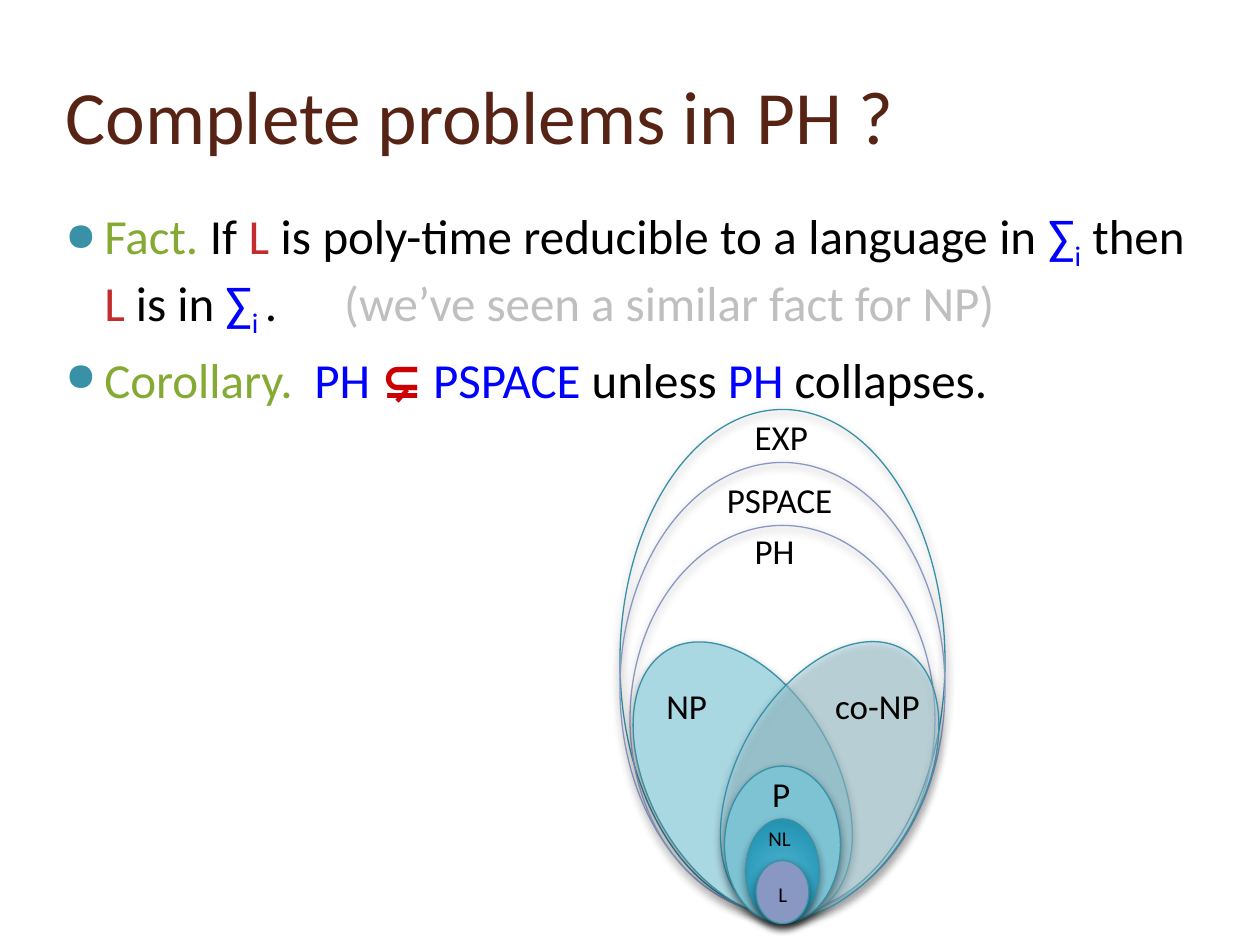
"""Build the slide on complete problems in PH, with its diagram of nested classes."""
from dataclasses import dataclass

from pptx import Presentation
from pptx.dml.color import RGBColor as RGB
from pptx.enum.shapes import MSO_SHAPE as Preset
from pptx.enum.text import MSO_ANCHOR as Anchor, MSO_AUTO_SIZE as AutoSize, PP_ALIGN as Align
from pptx.oxml import parse_xml
from pptx.oxml.ns import nsdecls, qn
from pptx.util import Inches, Pt


@dataclass(frozen=True)
class Theme:
    font: str = "Calibri"
    title_size: int = 43
    body_size: int = 28
    label_size: int = 20
    small_size: int = 12
    title: str = "572314"
    text: str = "000000"
    heading: str = "84AA33"
    language: str = "C32D2E"
    class_name: str = "0000FF"
    relation: str = "CC0000"
    aside: str = "BFBFBF"
    teal: str = "3891A7"
    violet: str = "8898C3"
    pale: str = "A9D7E2"
    aqua: str = "7EC3D4"
    glow: tuple = ((0, "45ACCC"), (15, "45ACCB"), (62, "2B9AB9"), (97, "1C8AA7"), (100, "0E89A7"))


THEME = Theme()


def make(tag, content="", attributes=""):
    return parse_xml(f"<a:{tag} {nsdecls('a')} {attributes}>{content}</a:{tag}>")


def add_span(para, text, color=THEME.text, size=THEME.body_size, bold=False, base=0, spacing=0):
    span = para.add_run()
    span.text = text
    span.font.name = THEME.font
    span.font.size = Pt(size)
    span.font.bold = bold
    span.font.color.rgb = RGB.from_string(color)
    properties = span.font._element
    if base:
        properties.set("baseline", str(base * 1000))
    if spacing:
        properties.set("spc", str(spacing * 100))


def add_title(page, text):
    title = page.shapes.title
    title.left, title.top, title.width, title.height = map(Inches, (0.42, 0.33, 8.83, 1.15))
    frame = title.text_frame
    frame.auto_size = AutoSize.NONE
    frame.vertical_anchor = Anchor.MIDDLE
    para = frame.paragraphs[0]
    para.alignment = Align.LEFT
    add_span(para, text, THEME.title, THEME.title_size)


def add_box(page, left, top, width, height):
    box = page.shapes.add_textbox(*map(Inches, (left, top, width, height)))
    box.text_frame.word_wrap = True
    return box.text_frame


def format_bullet(para):
    para.alignment = Align.JUSTIFY
    para.space_before = Pt(6)
    properties = para._p.get_or_add_pPr()
    properties.set("marL", str(Inches(0.4)))
    properties.set("indent", str(Inches(-0.31)))
    properties.append(make("buClr", f'<a:srgbClr val="{THEME.teal}"/>'))
    properties.append(make("buSzPct", attributes='val="80000"'))
    properties.append(make("buChar", attributes='char="●"'))


def add_bullets(page, items):
    frame = add_box(page, 0.33, 1.58, 9.17, 5.83)
    for index, spans in enumerate(items):
        para = frame.add_paragraph() if index else frame.paragraphs[0]
        format_bullet(para)
        for text, form in spans:
            add_span(para, text, **form)


def add_label(page, text, left, top, width, size=THEME.label_size):
    height = 0.44 if size == THEME.label_size else 0.3
    frame = add_box(page, left, top, width, height)
    frame.auto_size = AutoSize.SHAPE_TO_FIT_TEXT
    add_span(frame.paragraphs[0], text, size=size)


def fill_radial(shape, stops):
    shape.fill.gradient()
    gradient = shape.element.spPr.find(qn("a:gradFill"))
    for child in list(gradient):
        gradient.remove(child)
    marks = "".join(f'<a:gs pos="{place * 1000}"><a:srgbClr val="{color}"/></a:gs>'
                    for place, color in stops)
    center = '<a:fillToRect l="50000" t="50000" r="50000" b="50000"/>'
    gradient.append(make("gsLst", marks))
    gradient.append(make("path", center, 'path="circle"'))


def add_shadow(shape):
    shape.shadow.inherit = False
    color = '<a:srgbClr val="000000"><a:alpha val="43000"/></a:srgbClr>'
    form = f'blurRad="{Pt(5)}" dist="{Pt(2)}" dir="5400000" rotWithShape="0"'
    shape.element.spPr.find(qn("a:effectLst")).append(make("outerShdw", color, form))


def add_ellipse(page, left, top, width, height, fill=None, line=THEME.teal, turn=0, alpha=100):
    shape = page.shapes.add_shape(Preset.OVAL, *map(Inches, (left, top, width, height)))
    shape.rotation = turn
    if fill is None:
        shape.fill.background()
    elif isinstance(fill, tuple):
        fill_radial(shape, fill)
    else:
        shape.fill.solid()
        shape.fill.fore_color.rgb = RGB.from_string(fill)
        if alpha < 100:
            color = shape.element.spPr.find(qn("a:solidFill")).find(qn("a:srgbClr"))
            color.append(make("alpha", attributes=f'val="{alpha * 1000}"'))
    shape.line.color.rgb = RGB.from_string(line)
    shape.line.width = Pt(0.75)
    add_shadow(shape)


def add_classes(page):
    add_ellipse(page, 4.92, 3.25, 2.58, 4)
    add_label(page, "EXP", 5.89, 3.25, 0.86)
    add_ellipse(page, 4.92, 3.67, 2.58, 3.58, line=THEME.violet)
    add_label(page, "PSPACE", 5.67, 3.75, 1.17)
    add_ellipse(page, 5, 4.17, 2.42, 3.08, line=THEME.violet)
    add_label(page, "PH", 5.89, 4.15, 0.86)
    add_ellipse(page, 5.16, 5, 1.47, 2.38, THEME.pale, turn=330.2)
    add_ellipse(page, 5.85, 5, 1.47, 2.38, THEME.pale, turn=29.4, alpha=50)
    add_ellipse(page, 5.75, 6.08, 0.92, 1.25, THEME.aqua)
    add_label(page, "NP", 5.19, 5.38, 0.58)
    add_label(page, "co-NP", 6.53, 5.38, 1.08)
    add_label(page, "P", 6.03, 6.08, 0.58)
    add_ellipse(page, 5.92, 6.5, 0.58, 0.83, THEME.glow)
    add_label(page, "NL", 6, 6.5, 0.42, THEME.small_size)
    add_ellipse(page, 6, 6.83, 0.42, 0.5, THEME.violet)
    add_label(page, "L", 6.08, 6.95, 0.25, THEME.small_size)


def main():
    deck = Presentation()
    deck.slide_width, deck.slide_height = Inches(10), Inches(7.5)
    page = deck.slides.add_slide(deck.slide_layouts.get_by_name("Title Only"))
    add_title(page, "Complete problems in PH ?")

    plain = {}
    heading = {"color": THEME.heading}
    language = {"color": THEME.language}
    name = {"color": THEME.class_name}
    index = {**name, "base": -25}
    relation = {"color": THEME.relation, "bold": True}
    fact = [("Fact.", heading), (" If ", plain), ("L", language),
            (" is poly-time reducible to a language in ", plain), ("∑", name), ("i", index),
            (" then ", plain), ("L", language), (" is in ", plain), ("∑", name), ("i ", index),
            (".", plain), (" ", {"spacing": 32}),
            ("(we’ve seen a similar fact for NP)", {"color": THEME.aside})]
    corollary = [("Corollary.", heading), (" ", {"spacing": 6}), ("PH ", name), ("⊊ ", relation),
                 ("PSPACE", name), (" unless ", plain), ("PH", name), (" collapses.", plain)]
    add_bullets(page, [fact, corollary])
    add_classes(page)
    deck.save("out.pptx")


if __name__ == "__main__":
    main()
